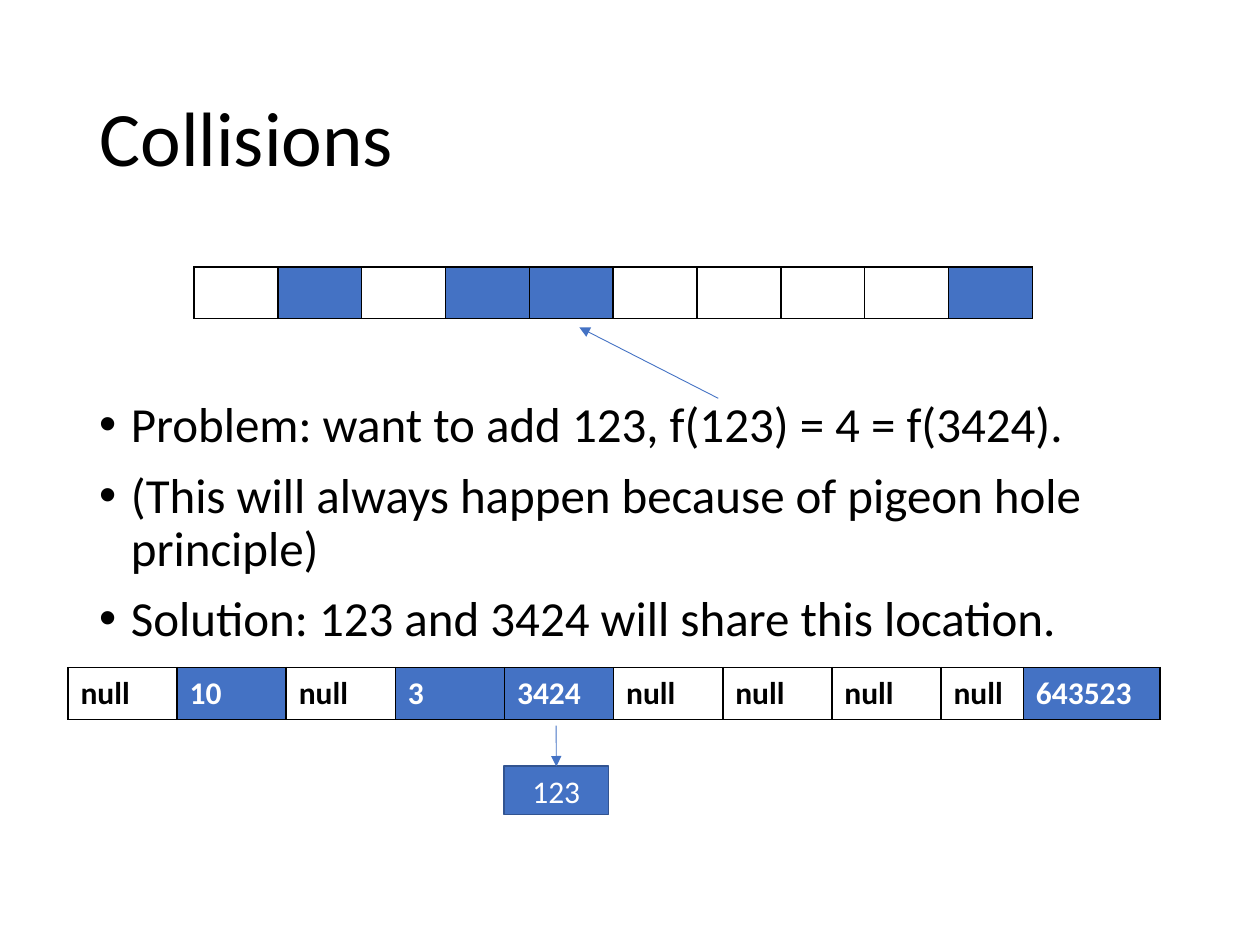
from lxml import etree
from pptx import Presentation
from pptx.dml.color import RGBColor
from pptx.enum.shapes import MSO_CONNECTOR, MSO_SHAPE
from pptx.enum.text import MSO_ANCHOR, PP_ALIGN
from pptx.oxml.ns import qn
from pptx.util import Cm, Pt

STRAIGHT = MSO_CONNECTOR.STRAIGHT
RECTANGLE = MSO_SHAPE.RECTANGLE
MIDDLE = MSO_ANCHOR.MIDDLE
LEFT, CENTER = PP_ALIGN.LEFT, PP_ALIGN.CENTER

BLACK = RGBColor(0x00, 0x00, 0x00)
WHITE = RGBColor(0xFF, 0xFF, 0xFF)
BLUE = RGBColor(0x44, 0x72, 0xC4)
DARK_BLUE = RGBColor(0x32, 0x54, 0x91)

OCCUPIED = {1, 3, 4, 9}
ROW_HEIGHT = 1.04
TOP_SIDE = 0


class SlideBuilder:
    font = "Calibri"

    def __init__(self, slide):
        self.slide = slide

    def format_runs(self, paragraph, size, color, bold=False):
        for run in paragraph.runs:
            run.font.name = self.font
            run.font.size = Pt(size)
            run.font.bold = bold
            run.font.color.rgb = color

    def title(self, text, left, top, width, height):
        heading = self.slide.shapes.title
        heading.left, heading.top = Cm(left), Cm(top)
        heading.width, heading.height = Cm(width), Cm(height)
        frame = heading.text_frame
        frame.text = text
        frame.word_wrap = True
        frame.vertical_anchor = MIDDLE
        paragraph = frame.paragraphs[0]
        paragraph.alignment = LEFT
        paragraph.line_spacing = 0.9
        self.format_runs(paragraph, 44, BLACK)

    def bullets(self, lines, left, top, width, height):
        frame = self.slide.shapes.add_textbox(
            Cm(left), Cm(top), Cm(width), Cm(height)).text_frame
        frame.word_wrap = True
        frame.text = "\n".join(lines)
        for paragraph in frame.paragraphs:
            paragraph.line_spacing = 0.9
            paragraph.space_before = Pt(10)
            self.format_runs(paragraph, 28, BLACK)
            properties = paragraph._p.get_or_add_pPr()
            properties.set("marL", str(Cm(0.64)))
            properties.set("indent", str(Cm(-0.64)))
            etree.SubElement(properties, qn("a:buFont"), typeface="Arial")
            etree.SubElement(properties, qn("a:buChar"), char="•")

    def cell_borders(self, cell):
        properties = cell._tc.get_or_add_tcPr()
        for side in ("a:lnL", "a:lnR", "a:lnT", "a:lnB"):
            line = etree.SubElement(properties, qn(side), w=str(Pt(1)))
            fill = etree.SubElement(line, qn("a:solidFill"))
            etree.SubElement(fill, qn("a:srgbClr"), val=str(BLACK))

    def array(self, values, widths, left, top):
        table = self.slide.shapes.add_table(
            1, len(values), Cm(left), Cm(top),
            Cm(sum(widths)), Cm(ROW_HEIGHT)).table
        table.first_row = table.horz_banding = False
        table.rows[0].height = Cm(ROW_HEIGHT)
        for index, (value, width) in enumerate(zip(values, widths)):
            table.columns[index].width = Cm(width)
            cell = table.cell(0, index)
            filled = index in OCCUPIED
            self.cell_borders(cell)
            cell.fill.solid()
            cell.fill.fore_color.rgb = BLUE if filled else WHITE
            if value:
                cell.text_frame.text = value
                self.format_runs(cell.text_frame.paragraphs[0], 18,
                                 WHITE if filled else BLACK, bold=True)

    def box(self, text, left, top, width, height):
        shape = self.slide.shapes.add_shape(
            RECTANGLE, Cm(left), Cm(top), Cm(width), Cm(height))
        shape.shadow.inherit = False
        shape.fill.solid()
        shape.fill.fore_color.rgb = BLUE
        shape.line.color.rgb = DARK_BLUE
        shape.line.width = Pt(1)
        frame = shape.text_frame
        frame.text = text
        frame.vertical_anchor = MIDDLE
        frame.paragraphs[0].alignment = CENTER
        self.format_runs(frame.paragraphs[0], 18, WHITE)
        return shape

    def arrow(self, start, end, target=None):
        connector = self.slide.shapes.add_connector(
            STRAIGHT, *(Cm(value) for value in start + end))
        if target is not None:
            connector.end_connect(target, TOP_SIDE)
        connector.line.color.rgb = BLUE
        connector.line.width = Pt(0.5)
        etree.SubElement(connector.line._get_or_add_ln(),
                         qn("a:tailEnd"), type="triangle")
        etree.SubElement(connector._element.spPr, qn("a:effectLst"))


def main():
    presentation = Presentation()
    presentation.slide_width, presentation.slide_height = Cm(25.4), Cm(19.05)
    title_only = presentation.slide_layouts[5]
    builder = SlideBuilder(presentation.slides.add_slide(title_only))

    # Title and explanation
    builder.title("Collisions", 1.75, 1.02, 21.9, 3.68)
    builder.bullets([
        "Problem: want to add 123, f(123) = 4 = f(3424).",
        "(This will always happen because of pigeon hole principle)",
        "Solution: 123 and 3424 will share this location.",
    ], 1.75, 7.95, 21.9, 9.22)

    # Array before the insertion, with the colliding slot marked
    builder.array([""] * 10, [1.69] * 10, 3.91, 5.38)
    builder.arrow((14.48, 8.03), (11.68, 6.6))

    # Array with the stored keys
    keys = ["null"] * 10
    for slot, key in {1: "10", 3: "3", 4: "3424", 9: "643523"}.items():
        keys[slot] = key
    builder.array(keys, [2.2] * 8 + [1.66, 2.76], 1.37, 13.46)

    # Chained key sharing slot 4
    chained_key = builder.box("123", 10.16, 15.45, 2.11, 0.97)
    builder.arrow((11.21, 14.63), (11.21, 15.45), chained_key)

    presentation.save("out.pptx")


if __name__ == "__main__":
    main()
